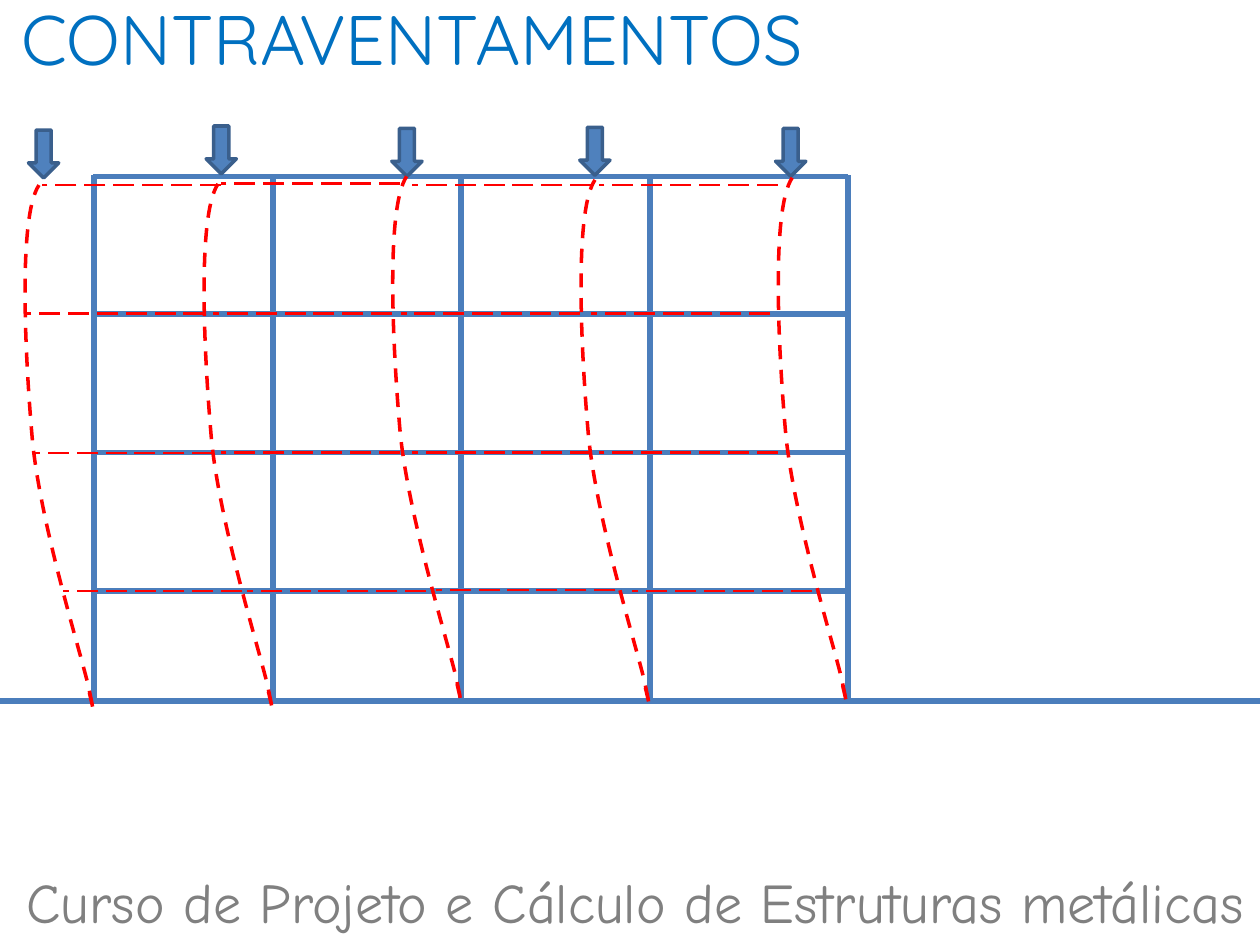
from dataclasses import dataclass

from lxml.etree import SubElement
from pptx import Presentation
from pptx.dml.color import RGBColor
from pptx.enum.dml import MSO_LINE
from pptx.enum.shapes import MSO_CONNECTOR, MSO_SHAPE
from pptx.enum.text import MSO_ANCHOR, MSO_AUTO_SIZE, PP_ALIGN
from pptx.oxml.ns import qn
from pptx.util import Pt


@dataclass(frozen=True)
class Theme:
    frame: RGBColor = RGBColor(0x4B, 0x7E, 0xBC)
    load: RGBColor = RGBColor(0x4F, 0x81, 0xBD)
    load_edge: RGBColor = RGBColor(0x3A, 0x5F, 0x8C)
    sway: RGBColor = RGBColor(0xFF, 0, 0)
    title: RGBColor = RGBColor(0, 0x70, 0xC0)
    course: RGBColor = RGBColor(0x80, 0x80, 0x80)
    title_font: str = "Quicksand"
    course_font: str = "Comic Neue"
    title_size: int = 40
    course_size: int = 32


THEME = Theme()

COLUMNS = [53.8, 156.2, 263.5, 371.5, 484.6]
COLUMN_TOP, GROUND = 100.1, 400.4
FLOORS = [(53.3, 100.8), (53.3, 179.3), (54, 258.5), (53.3, 337.8)]
FLOOR_WIDTH = 431.3

ARROW_WIDTH, ARROW_HEIGHT = 17.3, 27.4
LOADS = [(16.3, 74.3), (117.8, 72), (223.9, 73.4), (331.3, 72.8), (443.2, 73.4)]

# Bent column: a start and three control points per Bézier, relative to its box
BENT_WIDTH, BENT_HEIGHT = 39.6, 300.2
BENT_START = (36.7, 290.2)
BENT_CURVES = [
    [(38.9, 299.5), (41, 309.6), (36, 285.8)],
    [(30.2, 262.1), (9.3, 195.1), (4.3, 147.6)],
    [(0, 100.1), (-4.3, 18), (7.9, 0)],
]
BENT_BOXES = [(14.4, 105.8), (116.7, 105.1), (224.5, 100.8), (332.1, 102.8), (444.8, 101.6)]

# Left end and height of each displaced beam, floor by floor
BEAM_WIDTH = 102.5
BENT_BEAMS = [
    [(23.8, 105.8), (126, 105), (235.4, 105.8), (342, 105.8)],
    [(14.4, 179.3), (121.7, 179.3), (229, 179.3), (337.7, 179.3)],
    [(19.4, 258.9), (126, 258.6), (235.4, 258.6), (342, 258.6)],
    [(36, 337.8), (141.1, 337.8), (249.1, 337.2), (361.4, 337.8)],
]


def place(sp, left, top, width, height):
    sp.left, sp.top, sp.width, sp.height = Pt(left), Pt(top), Pt(width), Pt(height)


def write_centred(sp, text, font, size, color):
    tf = sp.text_frame
    tf.word_wrap = True
    tf.auto_size = MSO_AUTO_SIZE.SHAPE_TO_FIT_TEXT
    tf.vertical_anchor = MSO_ANCHOR.TOP
    p = tf.paragraphs[0]
    p.alignment = PP_ALIGN.CENTER
    r = p.add_run()
    r.text = text
    r.font.name, r.font.size = font, Pt(size)
    r.font.color.rgb = color


def add_line(s, x1, y1, x2, y2, color, width, dash=None):
    line = s.shapes.add_connector(MSO_CONNECTOR.STRAIGHT, Pt(x1), Pt(y1), Pt(x2), Pt(y2))
    line.line.color.rgb = color
    line.line.width = Pt(width)
    if dash:
        line.line.dash_style = dash
    SubElement(line._element.spPr, qn("a:effectLst"))


def add_load(s, left, top):
    sp = s.shapes.add_shape(MSO_SHAPE.DOWN_ARROW, Pt(left), Pt(top),
                            Pt(ARROW_WIDTH), Pt(ARROW_HEIGHT))
    sp.shadow.inherit = False
    sp.fill.solid()
    sp.fill.fore_color.rgb = THEME.load
    sp.line.color.rgb = THEME.load_edge
    sp.line.width = Pt(2)


def add_step(outline, tag, points):
    """Append one drawing step, such as a:moveTo, to a freeform's outline."""
    step = SubElement(outline, qn(tag))
    for x, y in points:
        SubElement(step, qn("a:pt"), x=str(Pt(x)), y=str(Pt(y)))


def add_bent_column(s, left, top):
    """Span the box with a freeform, then give it the curved outline."""
    builder = s.shapes.build_freeform(Pt(left), Pt(top))
    builder.add_line_segments([(Pt(left + BENT_WIDTH), Pt(top + BENT_HEIGHT))], close=False)
    sp = builder.convert_to_shape()
    outline = next(sp._element.iter(qn("a:path")))
    for step in list(outline):
        outline.remove(step)
    add_step(outline, "a:moveTo", [BENT_START])
    for controls in BENT_CURVES:
        add_step(outline, "a:cubicBezTo", controls)
    sp.shadow.inherit = False
    sp.fill.background()
    sp.line.color.rgb = THEME.sway
    sp.line.width = Pt(2)
    sp.line.dash_style = MSO_LINE.DASH


def add_frame(s):
    for x in COLUMNS:
        add_line(s, x, COLUMN_TOP, x, GROUND, THEME.frame, 3.25)
    for x, y in FLOORS:
        add_line(s, x, y, x + FLOOR_WIDTH, y, THEME.frame, 3.25)
    add_line(s, 0, GROUND, 720, GROUND, THEME.frame, 3.25)


def add_sway(s):
    for left, top in BENT_BOXES:
        add_bent_column(s, left, top)
    for floor in BENT_BEAMS:
        for x, y in floor:
            add_line(s, x + BEAM_WIDTH, y, x, y, THEME.sway, 1.5, MSO_LINE.LONG_DASH)


def main():
    prs = Presentation()
    prs.slide_width, prs.slide_height = Pt(720), Pt(540)
    s = prs.slides.add_slide(prs.slide_layouts[5])

    place(s.shapes.title, -110.6, -6, 691.9, 55.4)
    write_centred(s.shapes.title, "CONTRAVENTAMENTOS",
                  THEME.title_font, THEME.title_size, THEME.title)
    course = s.shapes.add_textbox(Pt(-31), Pt(492.3), Pt(799.2), Pt(46.1))
    write_centred(course, "Curso de Projeto e Cálculo de Estruturas metálicas ",
                  THEME.course_font, THEME.course_size, THEME.course)

    add_frame(s)
    for left, top in LOADS:
        add_load(s, left, top)
    add_sway(s)
    prs.save("out.pptx")


if __name__ == "__main__":
    main()
